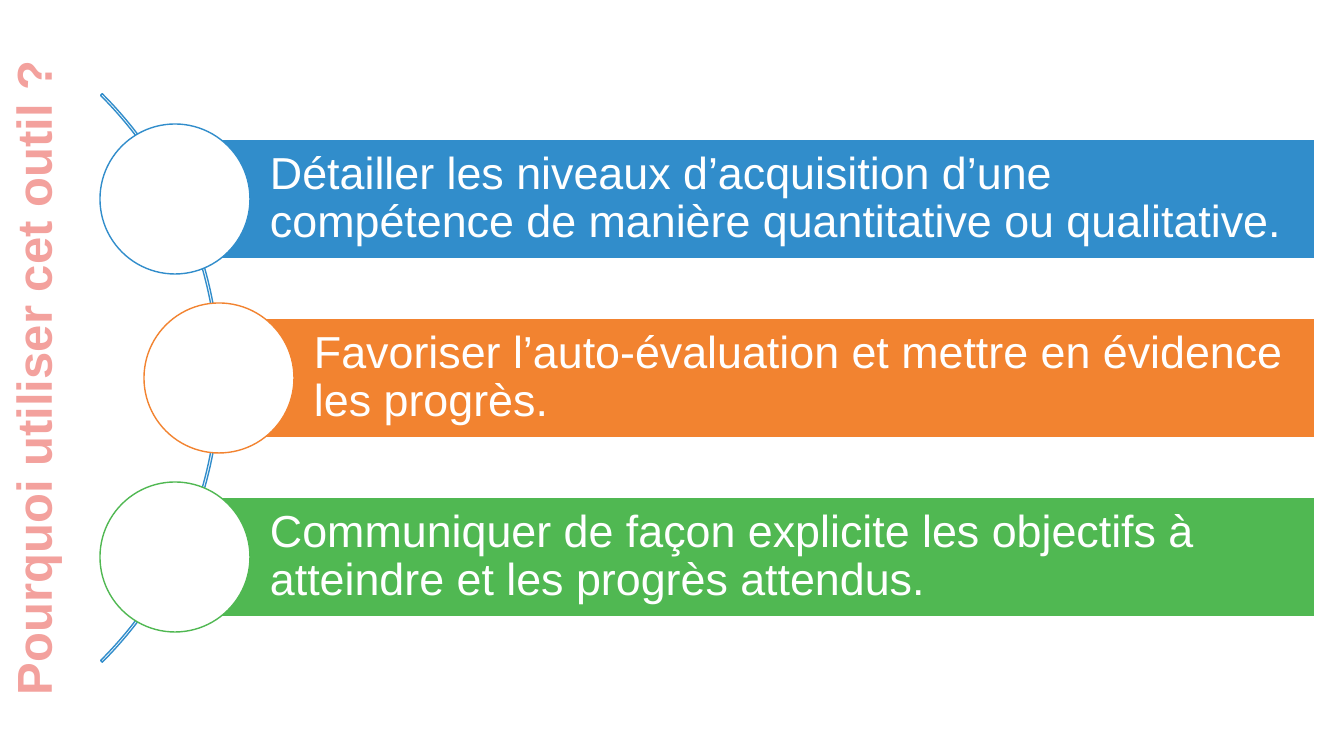
from pptx import Presentation
from pptx.dml.color import RGBColor
from pptx.enum.shapes import MSO_SHAPE
from pptx.enum.text import MSO_ANCHOR, PP_ALIGN
from pptx.util import Emu, Pt

RECT, OVAL, ARC = MSO_SHAPE.RECTANGLE, MSO_SHAPE.OVAL, MSO_SHAPE.BLOCK_ARC
MIDDLE = MSO_ANCHOR.MIDDLE
LEFT, CENTER = PP_ALIGN.LEFT, PP_ALIGN.CENTER

WHITE = RGBColor(0xFF, 0xFF, 0xFF)
PINK = RGBColor(0xF3, 0xA1, 0x9D)
BLUE = RGBColor(0x31, 0x8D, 0xCB)
ORANGE = RGBColor(0xF2, 0x83, 0x30)
GREEN = RGBColor(0x50, 0xB8, 0x52)

SCALE = 914400 / 100.8  # EMU per px
WIDTH, HEIGHT = 1344, 756

# Row layout: bars start at the centre of their circle
BAR_RIGHT, BAR_HEIGHT, CIRCLE = 1315, 120, 150
MIDDLE_Y, PITCH = 378, 179
ROWS = [
    (175, BLUE, "Détailler les niveaux d’acquisition d’une compétence "
                "de manière quantitative ou qualitative."),
    (219, ORANGE, "Favoriser l’auto-évaluation et mettre en évidence les progrès."),
    (175, GREEN, "Communiquer de façon explicite les objectifs à atteindre "
                 "et les progrès attendus."),
]


def px(n):
    return Emu(round(n * SCALE))


class Deck:
    font = "Arial"

    def __init__(self):
        self.prs = Presentation()
        self.prs.slide_width, self.prs.slide_height = px(WIDTH), px(HEIGHT)
        self.s = self.prs.slides.add_slide(self.prs.slide_layouts[6])

    def shape(self, kind, x, y, w, h, line, fill=None):
        sp = self.s.shapes.add_shape(kind, px(x), px(y), px(w), px(h))
        sp.shadow.inherit = False
        if fill is None:
            sp.fill.background()
        else:
            sp.fill.solid()
            sp.fill.fore_color.rgb = fill
        sp.line.color.rgb = line
        sp.line.width = Pt(1)
        return sp

    def text(self, tf, text, size, color, align, bold=False):
        p = tf.paragraphs[0]
        p.alignment = align
        r = p.add_run()
        r.text = text
        r.font.name = self.font
        r.font.size = Pt(size)
        r.font.bold = bold
        r.font.color.rgb = color
        return p

    def title(self, text, x, y, w, h):
        sp = self.s.shapes.add_textbox(px(x), px(y), px(w), px(h))
        sp.rotation = 270
        sp.text_frame.word_wrap = True
        self.text(sp.text_frame, text, 35, PINK, CENTER, bold=True)

    def arc(self, x, y, size):
        sp = self.shape(ARC, x, y, size, size, BLUE)
        for i, value in enumerate((189, 27, 0.003)):
            sp.adjustments[i] = value

    def bar(self, x, y, color, text):
        sp = self.shape(RECT, x, y - BAR_HEIGHT // 2, BAR_RIGHT - x, BAR_HEIGHT,
                        WHITE, color)
        tf = sp.text_frame
        tf.word_wrap = True
        tf.vertical_anchor = MIDDLE
        tf.margin_left = px(95)
        tf.margin_top = tf.margin_right = tf.margin_bottom = px(9)
        self.text(tf, text, 32, WHITE, LEFT).line_spacing = 0.9

    def circle(self, x, y, color):
        self.shape(OVAL, x - CIRCLE // 2, y - CIRCLE // 2, CIRCLE, CIRCLE,
                   color, WHITE)


def main():
    deck = Deck()

    # Vertical title
    deck.title("Pourquoi utiliser cet outil ?", -345, 343, HEIGHT, 70)

    # Arc behind the rows
    deck.arc(-584, -24, 804)

    # Bars with their circles
    for i, (x, color, text) in enumerate(ROWS):
        y = MIDDLE_Y + (i - 1) * PITCH
        deck.bar(x, y, color, text)
        deck.circle(x, y, color)

    deck.prs.save("out.pptx")


if __name__ == "__main__":
    main()
